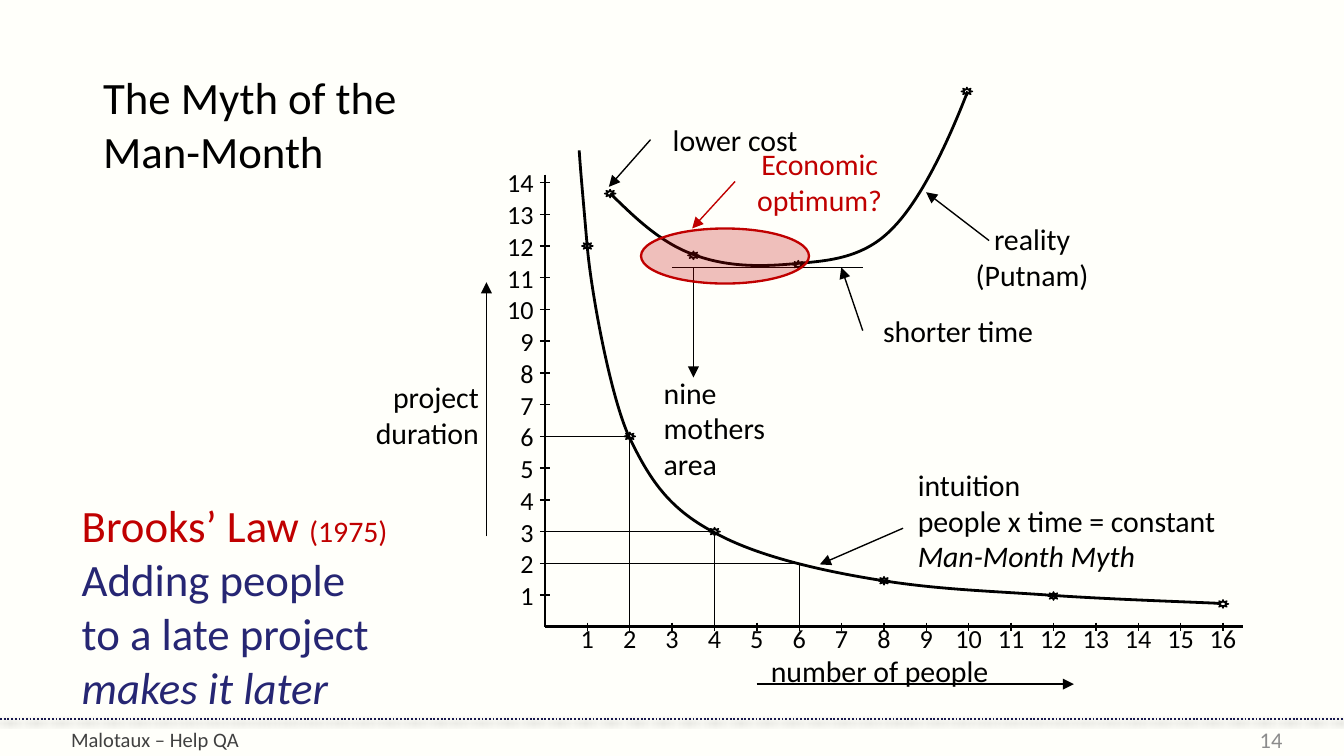
from pptx import Presentation
from pptx import util as u
from pptx.dml.color import RGBColor
from pptx.enum import dml, shapes as sh, text as t
from pptx.oxml import ns
from lxml import etree

Pt = u.Pt
PAPER = RGBColor(0xFF, 0xFF, 0xFA)
BLACK = RGBColor(0, 0, 0)
RED = RGBColor(0xC0, 0, 0)
BLUE = RGBColor(0x26, 0x26, 0x73)
NAVY = RGBColor(0x19, 0x19, 0x4D)
GREY = RGBColor(0x8C, 0x8C, 0x8C)
DARK = RGBColor(0x40, 0x40, 0x40)
LEFT, MID, RIGHT = t.PP_ALIGN.LEFT, t.PP_ALIGN.CENTER, t.PP_ALIGN.RIGHT

# Chart axes: origin and step of one unit
X0, Y0 = 292, 335.8
DX, DY = 22.7, 17
PEOPLE, MONTHS = 16, 14

# Each curve is a start point followed by Bezier triples
MYTH = [(653.8, 323.3),
        (639.4, 322.6), (594, 321.1), (563.8, 319),
        (533.5, 316.8), (504, 316.1), (472.3, 311),
        (440.6, 306), (405.4, 298.1), (382.3, 285.1),
        (357.8, 272.2), (347.8, 256.3), (337, 234),
        (326.9, 211.7), (316.8, 157), (314.6, 131.8),
        (312.5, 107.3), (311, 91.4), (310.3, 80.6)]
REAL = [(518.4, 49),
        (507.6, 77), (493.2, 107.3), (478.1, 122.4),
        (463, 138.2), (444.2, 139.7), (427.7, 141.1),
        (411.8, 142.6), (391, 144), (370.8, 136.1),
        (351.4, 128.9), (336.2, 112.3), (326.9, 103.7)]


def px(n):
    return X0 + DX * n


def py(n):
    return Y0 - DY * n


def sub(node, tag, **attrs):
    return etree.SubElement(node, ns.qn(tag), attrs)


def write(frame, *paras, size=16, color=BLACK, align=LEFT, wrap=False):
    """Fill a frame; a paragraph is a string or a list of (text, format)."""
    frame.word_wrap = wrap
    frame.auto_size = t.MSO_AUTO_SIZE.NONE
    frame.vertical_anchor = t.MSO_ANCHOR.MIDDLE
    for i, para in enumerate(paras):
        p = frame.add_paragraph() if i else frame.paragraphs[0]
        p.alignment = align
        for words, form in [(para, {})] if isinstance(para, str) else para:
            for j, line in enumerate(words.split("\n")):
                if j:
                    p.add_line_break()
                if not line:
                    continue
                run = p.add_run()
                run.text = line
                run.font.name = "Calibri"
                run.font.size = Pt(form.get("size", size))
                run.font.color.rgb = form.get("color", color)
                run.font.italic = form.get("italic")


def label(slide, x, y, w, h, *paras, **form):
    box = slide.shapes.add_textbox(Pt(x), Pt(y), Pt(w), Pt(h))
    write(box.text_frame, *paras, **form)
    return box


def line(slide, x1, y1, x2, y2, color=BLACK, width=0.75, head=False, start=None):
    """Draw a line; start is a box whose left side it leaves from."""
    con = slide.shapes.add_connector(
        sh.MSO_CONNECTOR.STRAIGHT, Pt(x1), Pt(y1), Pt(x2), Pt(y2))
    con.line.color.rgb = color
    con.line.width = Pt(width)
    if head:
        sub(con.line._get_or_add_ln(), "a:tailEnd", type="triangle")
    sub(con._element.spPr, "a:effectLst")
    if start is not None:
        con.begin_connect(start, 1)
    return con


def curve(slide, points):
    """Draw an open Bezier curve."""
    pts = [(Pt(x), Pt(y)) for x, y in points]
    form = slide.shapes.build_freeform(*pts[0])
    form.add_line_segments(pts[1:], close=False)
    shape = form.convert_to_shape()
    track = shape._element.find(".//" + ns.qn("a:path"))
    segs = track.findall(ns.qn("a:lnTo"))
    for i in range(0, len(segs), 3):
        bez = sub(track, "a:cubicBezTo")
        for seg in segs[i:i + 3]:
            bez.append(seg[0])
            track.remove(seg)
    trim(shape, BLACK, 1.5)


def trim(shape, color, width):
    shape.shadow.inherit = False
    shape.fill.background()
    shape.line.color.rgb = color
    shape.line.width = Pt(width)


def mark(slide, x, y):
    star = slide.shapes.add_shape(
        sh.MSO_SHAPE.SUN, Pt(x - 3), Pt(y - 2.2), Pt(6), Pt(4.4))
    trim(star, BLACK, 0.75)


def rule(slide):
    """Dotted line above the footer, with a soft shadow."""
    con = line(slide, 0, 385.2, 720, 385.2, color=NAVY, width=1)
    con.line.dash_style = dml.MSO_LINE.ROUND_DOT
    fx = con._element.spPr.find(ns.qn("a:effectLst"))
    shade = sub(fx, "a:outerShdw", blurRad=str(Pt(3.1)), dist=str(Pt(1.6)),
                dir="5400000", rotWithShape="0")
    sub(sub(shade, "a:srgbClr", val="000000"), "a:alpha", val="38000")


def axes(slide):
    line(slide, X0, Y0, 666, Y0, width=1.5)
    for n in range(1, PEOPLE + 1):
        line(slide, px(n), Y0 - 2.2, px(n), Y0 + 2.2)
        label(slide, px(n) - 7.2, 337.7, 14.4, 8.6, str(n), size=14, align=MID)
    line(slide, X0, 93.6, X0, Y0, width=1.5)
    for n in range(1, MONTHS + 1):
        line(slide, X0 - 2.8, py(n), X0 + 2.8, py(n))
        label(slide, 278.6, py(n) - 4.3, 14.4, 8.6, str(n), size=14, align=RIGHT)
    # Axis names with their arrows
    label(slide, 185.8, 198, 77.8, 48.2, "project\nduration", align=RIGHT)
    line(slide, 260.6, 287.3, 260.6, 151.2, head=True)
    label(slide, 391.7, 346.3, 159.1, 25.9, "number of people", align=MID)
    line(slide, 405.4, 366.5, 575.3, 366.5, head=True)


def myth(slide):
    curve(slide, MYTH)
    for n, m in [(1, 12), (2, 6), (4, 3), (8, 1.45), (12, 0.97), (16, 0.72)]:
        mark(slide, px(n), py(m))
    for n in (2, 4, 6):
        line(slide, X0, py(12 / n), px(n), py(12 / n))
        line(slide, px(n), py(12 / n), px(n), Y0)
    label(slide, 484.6, 270, 90.7, 17.3,
          [("intuition\npeople x time = constant\n", {}),
           ("Man-Month Myth", {"italic": True})])
    line(slide, 483.8, 283, 439.2, 302.4, head=True)


def reality(slide):
    curve(slide, REAL)
    for x, y in [(326.9, 103.7), (371.5, 136.8), (518, 49), (427.7, 141.8)]:
        mark(slide, x, y)
    label(slide, 507.6, 128.9, 90.7, 17.3, "reality", "(Putnam)", align=MID)
    line(slide, 529.9, 128.9, 496.1, 103, head=True)
    cost = label(slide, 348.5, 66.2, 90.7, 17.3, "lower cost", align=MID)
    line(slide, 348.5, 74.9, 326.2, 100.1, head=True, start=cost)
    time = label(slide, 462.2, 168.5, 102.2, 17.3, "shorter time", align=MID)
    line(slide, 360, 143.3, 462.2, 143.3)
    line(slide, 462.2, 177.1, 450.7, 143.3, head=True, start=time)
    label(slide, 348.5, 216.7, 90.7, 25.2, "nine\nmothers\narea")
    line(slide, 371.5, 143.3, 371.5, 202.3, head=True)
    # Optimum zone
    zone = slide.shapes.add_shape(
        sh.MSO_SHAPE.OVAL, Pt(343.4), Pt(122.4), Pt(90), Pt(29.5))
    trim(zone, RED, 1.25)
    zone.fill.solid()
    zone.fill.fore_color.rgb = RED
    tint = zone._element.spPr.find(ns.qn("a:solidFill"))[0]
    sub(tint, "a:alpha", val="25000")
    best = label(slide, 393.8, 88.6, 90.7, 17.3, "Economic\noptimum?",
                 color=RED, align=MID)
    line(slide, 393.8, 97.2, 370.8, 122.4, color=RED, head=True, start=best)


def main():
    deck = Presentation()
    deck.slide_width, deck.slide_height = Pt(720), Pt(405)
    slide = deck.slides.add_slide(deck.slide_layouts[5])
    slide.background.fill.solid()
    slide.background.fill.fore_color.rgb = PAPER

    # Title
    rule(slide)
    title = slide.shapes.title
    title.left, title.top, title.width, title.height = map(Pt, (48, 31.7, 618, 69))
    write(title.text_frame, "The Myth of the\nMan-Month", size=24, wrap=True)

    # Chart
    axes(slide)
    myth(slide)
    reality(slide)

    # Law and footer
    label(slide, 36.7, 272.2, 249.8, 104.4,
          [("Brooks’ Law ", {"color": RED}),
           ("(1975)\n", {"color": RED, "size": 16}),
           ("Adding people\nto a late project\n", {}),
           ("makes it later", {"italic": True})],
          size=24, color=BLUE, wrap=True)
    label(slide, 526.3, 385.2, 167.8, 21.6, "14",
          size=12, color=GREY, align=RIGHT, wrap=True)
    label(slide, 31, 385.2, 228.2, 21.6, "Malotaux – Help QA",
          size=11, color=DARK, wrap=True)
    deck.save("out.pptx")


if __name__ == "__main__":
    main()
